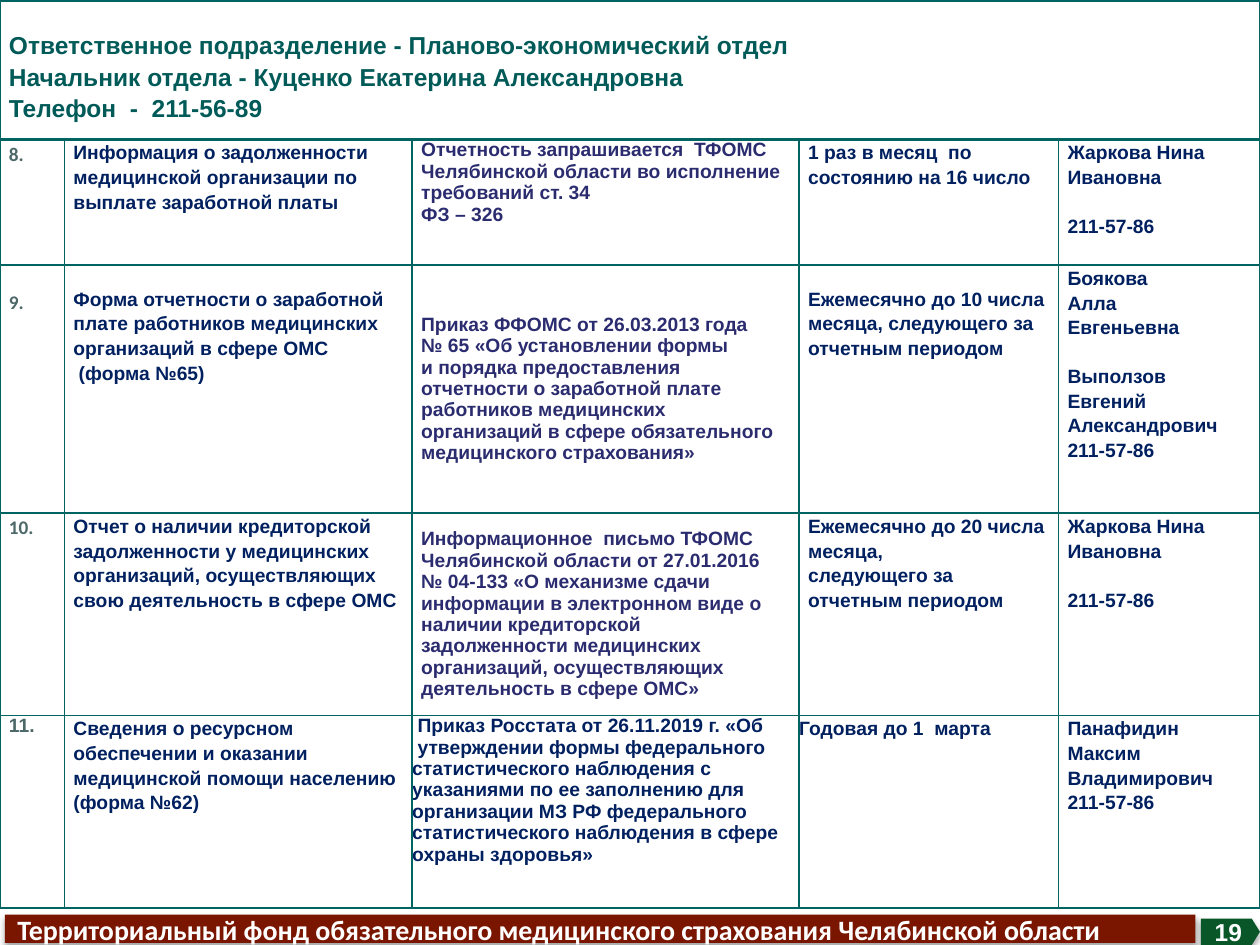
from dataclasses import dataclass

from lxml import etree
from pptx import Presentation
from pptx.dml.color import RGBColor
from pptx.enum.shapes import MSO_SHAPE
from pptx.enum.text import MSO_ANCHOR, PP_ALIGN
from pptx.oxml.ns import qn
from pptx.util import Cm, Pt

RECTANGLE = MSO_SHAPE.RECTANGLE
PENTAGON = MSO_SHAPE.PENTAGON
TOP, MIDDLE = MSO_ANCHOR.TOP, MSO_ANCHOR.MIDDLE
LEFT, CENTER = PP_ALIGN.LEFT, PP_ALIGN.CENTER


@dataclass(frozen=True)
class Theme:
    """Colours, fonts and type sizes of the slide."""
    heading: str = "005A58"
    number: str = "4D6868"
    body: str = "002060"
    legal: str = "2B2C6F"
    border: str = "006462"
    banner: str = "7A1600"
    badge: str = "095729"
    light: str = "FFFFFF"
    main_font: str = "Arial"
    accent_font: str = "Calibri"
    body_size: int = 11
    heading_size: int = 14
    banner_size: int = 16


@dataclass(frozen=True)
class Entry:
    """Paragraphs of one table cell and the way they are set."""
    paragraphs: tuple
    color: str
    font: str = Theme.main_font
    size: int = Theme.body_size
    spacing: float = 1.15
    anchor: int = TOP
    side: float = 0.18
    top: float = 0
    gap_before: tuple = ()


COLUMN_WIDTHS = (1.3, 7.01, 7.8, 5.23, 4.06)
ROW_HEIGHTS = (2.79, 2.53, 5.0, 4.08, 3.89)
BLANK_LINE = 14


def number(text, **options):
    """Return an entry for the row number."""
    return Entry((text,), Theme.number, **{"font": Theme.accent_font, **options})


def plain(*paragraphs, **options):
    """Return an entry in the main text colour."""
    return Entry(paragraphs, Theme.body, **options)


def legal(*paragraphs, **options):
    """Return an entry for the legal basis of a report."""
    return Entry(paragraphs, Theme.legal, spacing=1, **options)


HEADING = Entry(
    ("Ответственное подразделение - Планово-экономический отдел",
     "Начальник отдела - Куценко Екатерина Александровна",
     "Телефон  -  211-56-89"),
    Theme.heading, size=Theme.heading_size, top=0.55)

REPORTS = (
    (number("8."),
     plain("Информация о задолженности медицинской организации по выплате заработной платы"),
     legal("Отчетность запрашивается  ТФОМС Челябинской области во исполнение требований ст. 34",
           "ФЗ – 326"),
     plain("1 раз в месяц  по состоянию на 16 число"),
     plain("Жаркова Нина Ивановна", "211-57-86", gap_before=(1,))),
    (number("9.", top=0.45),
     plain("Форма отчетности о заработной плате работников медицинских организаций в сфере ОМС",
           " (форма №65)", top=0.42),
     legal("Приказ ФФОМС от 26.03.2013 года\n№ 65 «Об установлении формы\n"
           "и порядка предоставления отчетности о заработной плате работников медицинских "
           "организаций в сфере обязательного медицинского страхования»", anchor=MIDDLE),
     plain("Ежемесячно до 10 числа месяца, следующего за отчетным периодом", top=0.42),
     plain("Боякова", "Алла", "Евгеньевна", "Выползов", "Евгений", "Александрович",
           "211-57-86", gap_before=(3,))),
    (number("10."),
     plain("Отчет о наличии кредиторской задолженности у медицинских организаций, "
           "осуществляющих свою деятельность в сфере ОМС"),
     legal("Информационное  письмо ТФОМС Челябинской области от 27.01.2016\n"
           "№ 04-133 «О механизме сдачи информации в электронном виде о наличии "
           "кредиторской задолженности медицинских организаций, осуществляющих "
           "деятельность в сфере ОМС»", anchor=MIDDLE),
     plain("Ежемесячно до 20 числа месяца,", "следующего за отчетным периодом"),
     plain("Жаркова Нина Ивановна", "211-57-86", gap_before=(1,))),
    (number("11.", font=Theme.main_font, spacing=1),
     plain("Сведения о ресурсном обеспечении и оказании медицинской помощи населению "
           "(форма №62)"),
     plain(" Приказ Росстата от 26.11.2019 г. «Об",
           " утверждении формы федерального статистического наблюдения с указаниями по ее "
           "заполнению для организации МЗ РФ федерального статистического наблюдения в "
           "сфере охраны здоровья»", spacing=1, side=0),
     plain("Годовая до 1  марта", side=0),
     plain("Панафидин Максим Владимирович", "211-57-86")),
)


def add_text(paragraph, text, font, size, color):
    """Add bold text, turning each newline into a line break."""
    for index, line in enumerate(text.split("\n")):
        if index:
            paragraph.add_line_break()
        run = paragraph.add_run()
        run.text = line
        run.font.name = font
        run.font.size = Pt(size)
        run.font.bold = True
        run.font.color.rgb = RGBColor.from_string(color)


def set_borders(cell, bottom=1, top=1):
    """Draw the four edges of a cell."""
    properties = cell._tc.get_or_add_tcPr()
    edges = (("a:lnL", 1), ("a:lnR", 1), ("a:lnT", top), ("a:lnB", bottom))
    for index, (tag, width) in enumerate(edges):
        edge = etree.Element(qn(tag), w=str(Pt(width)))
        fill = etree.SubElement(edge, qn("a:solidFill"))
        etree.SubElement(fill, qn("a:srgbClr"), val=Theme.border)
        properties.insert(index, edge)


def fill_cell(cell, entry):
    """Write an entry into a table cell."""
    cell.margin_left = cell.margin_right = Cm(entry.side)
    cell.margin_top, cell.margin_bottom = Cm(entry.top), Cm(0)
    cell.vertical_anchor = entry.anchor
    frame = cell.text_frame
    for index, text in enumerate(entry.paragraphs):
        paragraph = frame.add_paragraph() if index else frame.paragraphs[0]
        paragraph.line_spacing = entry.spacing
        if index in entry.gap_before:
            paragraph.space_before = Pt(BLANK_LINE)
        add_text(paragraph, text, entry.font, entry.size, entry.color)


def add_report_table(slide):
    """Add the table of reports under its department heading."""
    table = slide.shapes.add_table(
        len(ROW_HEIGHTS), len(COLUMN_WIDTHS), Cm(0), Cm(0.02),
        Cm(sum(COLUMN_WIDTHS)), Cm(sum(ROW_HEIGHTS))).table
    table.first_row = table.horz_banding = False
    for column, width in zip(table.columns, COLUMN_WIDTHS):
        column.width = Cm(width)
    for index, (row, height) in enumerate(zip(table.rows, ROW_HEIGHTS)):
        row.height = Cm(height)
        for cell in row.cells:
            cell.fill.background()
            set_borders(cell, bottom=1 if index else 2, top=2 if index == 1 else 1)
    heading = table.cell(0, 0)
    heading.merge(table.cell(0, len(COLUMN_WIDTHS) - 1))
    fill_cell(heading, HEADING)
    for row_index, report in enumerate(REPORTS, start=1):
        for column_index, entry in enumerate(report):
            fill_cell(table.cell(row_index, column_index), entry)


def add_soft_shadow(shape):
    """Give a shape a faint shadow that falls downwards."""
    shape.shadow.inherit = False
    effects = shape._element.spPr.find(qn("a:effectLst"))
    shadow = etree.SubElement(effects, qn("a:outerShdw"), blurRad=str(Pt(3.5)),
                              dist=str(Pt(2.2)), dir="5400000", rotWithShape="0")
    color = etree.SubElement(shadow, qn("a:srgbClr"), val="000000")
    etree.SubElement(color, qn("a:alpha"), val="32000")


def add_footer_shape(slide, preset, box, color, text, font, size, align):
    """Add a filled footer shape with one line of text."""
    shape = slide.shapes.add_shape(preset, *map(Cm, box))
    shape.fill.solid()
    shape.fill.fore_color.rgb = RGBColor.from_string(color)
    shape.line.fill.background()
    add_soft_shadow(shape)
    frame = shape.text_frame
    frame.word_wrap = True
    frame.vertical_anchor = MIDDLE
    paragraph = frame.paragraphs[0]
    paragraph.alignment = align
    add_text(paragraph, text, font, size, Theme.light)
    return shape


def main():
    """Build and save the slide."""
    presentation = Presentation()
    presentation.slide_width, presentation.slide_height = Cm(25.4), Cm(19.05)
    slide = presentation.slides.add_slide(presentation.slide_layouts[6])
    add_report_table(slide)
    add_footer_shape(
        slide, RECTANGLE, (0.1, 18.44, 24, 0.57), Theme.banner,
        "Территориальный фонд обязательного медицинского страхования Челябинской области",
        Theme.accent_font, Theme.banner_size, LEFT)
    badge = add_footer_shape(
        slide, PENTAGON, (24.21, 18.52, 1.19, 0.53), Theme.badge,
        "19", Theme.main_font, Theme.heading_size, CENTER)
    badge.adjustments[0] = 0.31
    presentation.save("out.pptx")


if __name__ == "__main__":
    main()
